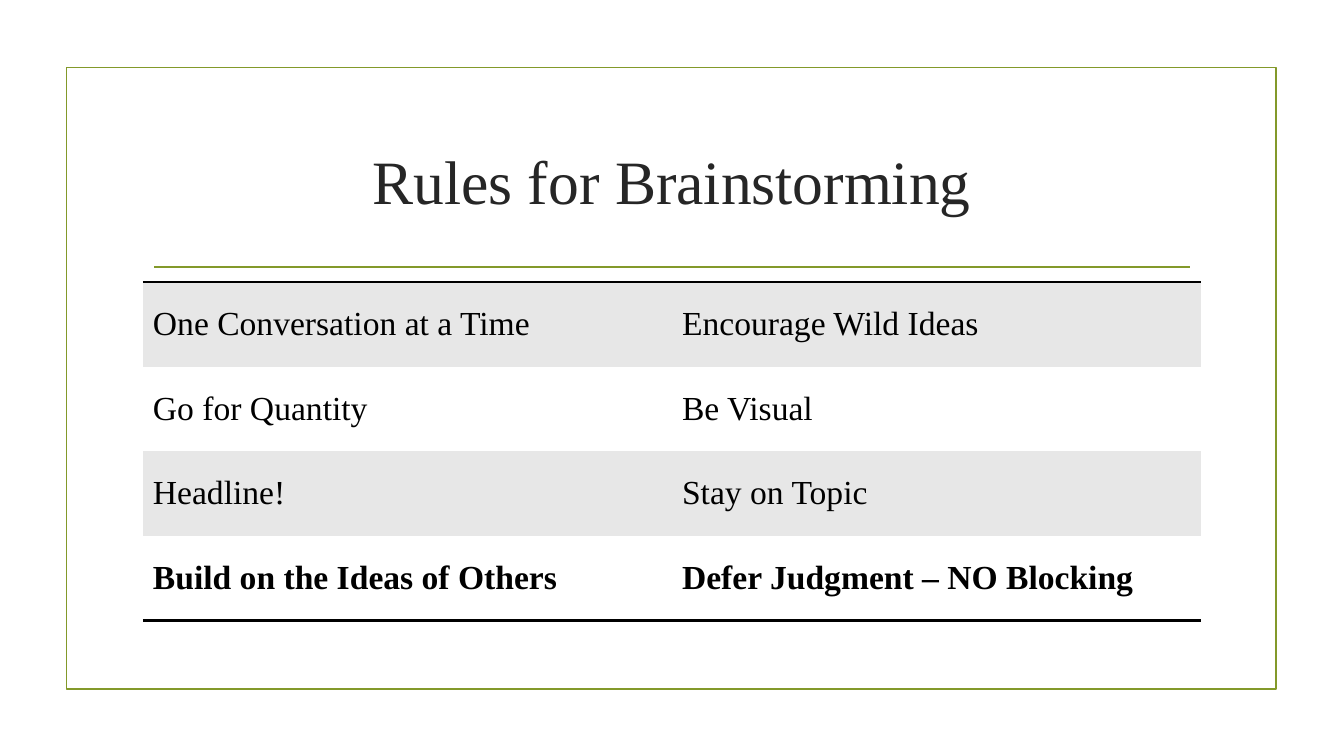
from lxml.etree import SubElement
from pptx import Presentation
from pptx.dml.color import RGBColor
from pptx.enum.shapes import MSO_CONNECTOR as Connector, MSO_SHAPE as Shape
from pptx.enum.text import MSO_ANCHOR as Anchor, MSO_AUTO_SIZE as AutoSize, PP_ALIGN as Align
from pptx.oxml import parse_xml
from pptx.oxml.ns import nsdecls, qn
from pptx.util import Cm, Pt

TITLE = "Rules for Brainstorming"
RULES = [
    ("One Conversation at a Time", "Encourage Wild Ideas"),
    ("Go for Quantity", "Be Visual"),
    ("Headline!", "Stay on Topic"),
    ("Build on the Ideas of Others", "Defer Judgment – NO Blocking"),
]
FONT = "Times New Roman"
GREEN, DARK, BLACK = "83992A", "262626", "000000"
BANDS = ("E7E7E7", "FFFFFF")
PLAIN_TABLE = "{2D5ABB26-0587-4C30-8999-92F81FD0307C}"
LEFT, WIDTH, ROW_HEIGHT = 3.6, 26.67, 2.13


def color(value):
    return RGBColor.from_string(value)


def write(frame, text, size, ink, bold=False, align=Align.LEFT):
    para = frame.paragraphs[0]
    para.alignment = align
    span = para.add_run()
    span.text = text
    span.font.name = FONT
    span.font.size = Pt(size)
    span.font.bold = bold
    span.font.color.rgb = color(ink)


def style_line(shape):
    shape.line.color.rgb = color(GREEN)
    shape.line.width = Pt(1.25)


def add_border(cell, side, ink, points):
    border = parse_xml(
        f'<a:{side} {nsdecls("a")} w="{Pt(points)}"><a:solidFill>'
        f'<a:srgbClr val="{ink}"/></a:solidFill></a:{side}>'
    )
    cell._tc.get_or_add_tcPr().insert(0, border)


def add_rules(page):
    last = len(RULES) - 1
    holder = page.shapes.add_table(
        len(RULES), 2, Cm(LEFT), Cm(7.11), Cm(WIDTH), Cm(ROW_HEIGHT * len(RULES))
    )
    table = holder.table
    table.first_row = table.horz_banding = False
    next(holder._element.iter(qn("a:tableStyleId"))).text = PLAIN_TABLE
    for row, rules in enumerate(RULES):
        for column, rule in enumerate(rules):
            cell = table.cell(row, column)
            cell.vertical_anchor = Anchor.MIDDLE
            cell.fill.solid()
            cell.fill.fore_color.rgb = color(BANDS[row % 2])
            write(cell.text_frame, rule, 24, BLACK, bold=row == last)
            if row == 0:
                add_border(cell, "lnT", BLACK, 2)
            if row == last:
                add_border(cell, "lnB", BLACK, 2)


def main():
    deck = Presentation()
    deck.slide_width, deck.slide_height = Cm(33.87), Cm(19.05)
    page = deck.slides.add_slide(deck.slide_layouts[5])

    frame = page.shapes.add_shape(Shape.RECTANGLE, Cm(1.68), Cm(1.7), Cm(30.48), Cm(15.67))
    frame.shadow.inherit = False
    frame.fill.background()
    style_line(frame)

    divider = page.shapes.add_connector(Connector.STRAIGHT, Cm(3.89), Cm(6.73), Cm(30), Cm(6.73))
    style_line(divider)
    SubElement(divider._element.spPr, qn("a:effectLst"))

    title = page.shapes.title
    title.left, title.top, title.width, title.height = Cm(LEFT), Cm(2.72), Cm(WIDTH), Cm(3.63)
    title.text_frame.auto_size = AutoSize.NONE
    title.text_frame.vertical_anchor = Anchor.MIDDLE
    write(title.text_frame, TITLE, 44, DARK, align=Align.CENTER)

    add_rules(page)
    deck.save("out.pptx")


if __name__ == "__main__":
    main()
